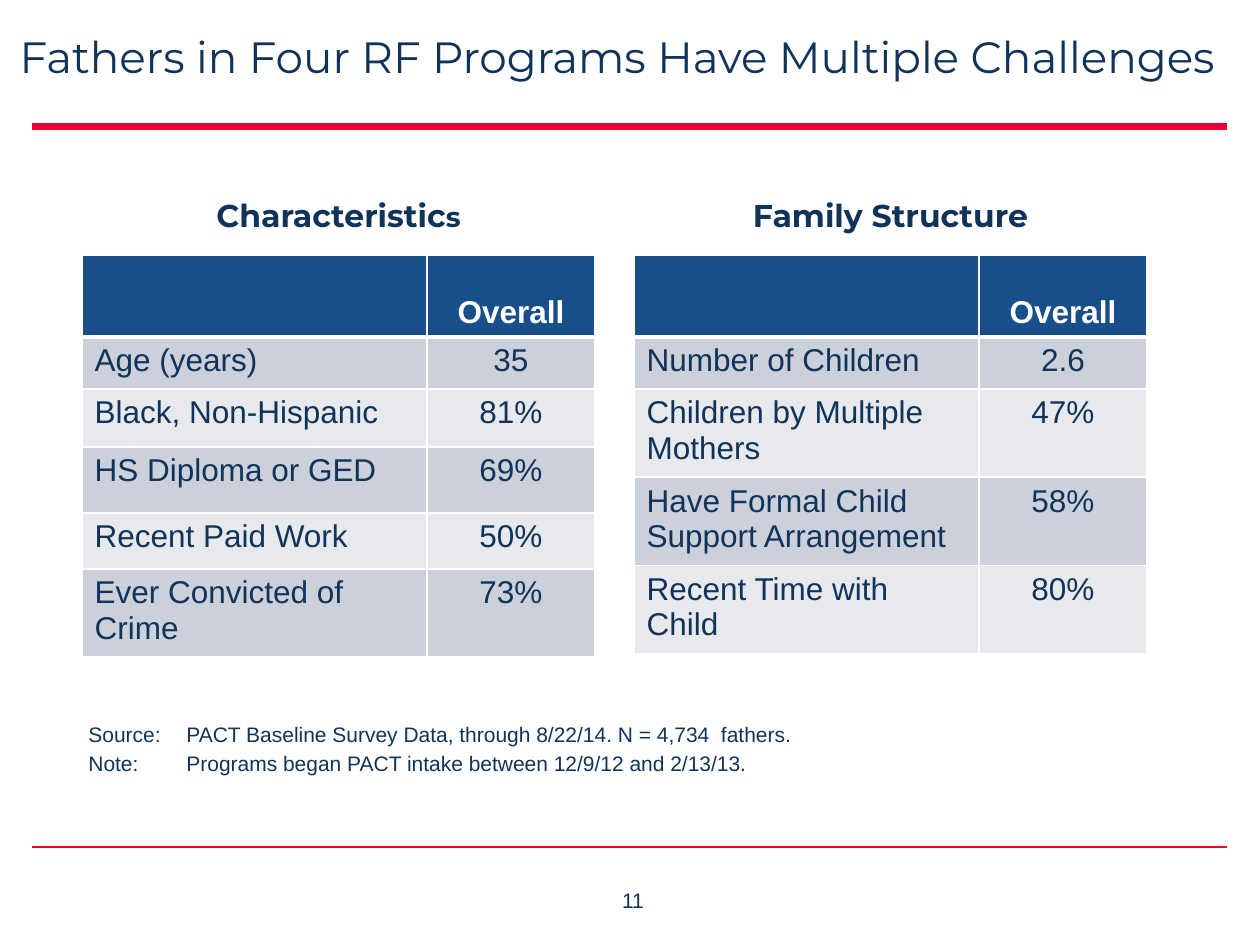
from lxml import etree
from pptx import Presentation, util as u
from pptx.dml.color import RGBColor
from pptx.enum import shapes, text
from pptx.oxml.ns import qn

NAVY = RGBColor(0x10, 0x33, 0x5A)
BLUE = RGBColor(0x18, 0x4E, 0x8A)
RED = RGBColor(0xE7, 0x00, 0x33)
WHITE = RGBColor(0xFF, 0xFF, 0xFF)
BANDS = [RGBColor(0xCC, 0xD0, 0xDA), RGBColor(0xE8, 0xE9, 0xED)]
CENTER = text.PP_ALIGN.CENTER


def px(n):
    return u.Emu(round(n * 914400 / 126))


def style(p, size, font="Arial", color=NAVY, bold=False, align=None):
    p.alignment = align
    p.font.size = u.Pt(size)
    p.font.name = font
    p.font.bold = bold
    p.font.color.rgb = color


prs = Presentation()
prs.slide_width, prs.slide_height = px(1260), px(945)
s = prs.slides.add_slide(prs.slide_layouts[5])

for y, weight in [(127, 4), (847, 1)]:
    rule = s.shapes.add_connector(shapes.MSO_CONNECTOR.STRAIGHT, px(32), px(y), px(1227), px(y))
    rule.line.color.rgb = RED
    rule.line.width = u.Pt(weight)
    etree.SubElement(rule._element.spPr, qn("a:effectLst"))

title = s.shapes.title
title.left, title.top, title.width, title.height = px(0), px(30), px(1234), px(120)
tf = title.text_frame
tf.margin_left = tf.margin_top = tf.margin_right = tf.margin_bottom = 0
tf.auto_size = text.MSO_AUTO_SIZE.NONE
tf.vertical_anchor = text.MSO_ANCHOR.TOP
tf.text = "Fathers in Four RF Programs Have Multiple Challenges"
style(tf.paragraphs[0], 25, "Montserrat", align=CENTER)

panels = [
    (82, [("Characteristic", 18), ("s", 16)], [
        ("Age (years)", "35", 52),
        ("Black, Non-Hispanic", "81%", 58),
        ("HS Diploma or GED", "69%", 66),
        ("Recent Paid Work", "50%", 56),
        ("Ever Convicted of Crime", "73%", 83),
    ]),
    (634, [("Family Structure", 18)], [
        ("Number of Children", "2.6", 52),
        ("Children by Multiple Mothers", "47%", 83),
        ("Have Formal Child Support Arrangement", "58%", 83),
        ("Recent Time with Child", "80%", 83),
    ]),
]
for left, heading, rows in panels:
    tf = s.shapes.add_textbox(px(left), px(190), px(513), px(65)).text_frame
    tf.word_wrap = True
    p = tf.paragraphs[0]
    style(p, 18, "Montserrat", bold=True, align=CENTER)
    for part, size in heading:
        r = p.add_run()
        r.text = part
        r.font.size = u.Pt(size)

    grid = [("", "Overall", 82)] + rows
    total = sum(height for _, _, height in grid)
    table = s.shapes.add_table(len(grid), 2, px(left), px(255), px(513), px(total)).table
    table.columns[0].width, table.columns[1].width = px(345), px(168)
    for i, (label, value, height) in enumerate(grid):
        table.rows[i].height = px(height)
        for j, words in enumerate([label, value]):
            cell = table.cell(i, j)
            for side in "LRTB":
                thick = (i, side) in [(0, "B"), (1, "T")]
                ln = etree.SubElement(cell._tc.get_or_add_tcPr(), qn("a:ln" + side),
                                      w=str(u.Pt(3 if thick else 1)))
                fill = etree.SubElement(ln, qn("a:solidFill"))
                etree.SubElement(fill, qn("a:srgbClr"), val=str(WHITE))
            cell.fill.solid()
            cell.fill.fore_color.rgb = BANDS[(i - 1) % 2] if i else BLUE
            cell.vertical_anchor = text.MSO_ANCHOR.TOP if i else text.MSO_ANCHOR.BOTTOM
            cell.text = words
            style(cell.text_frame.paragraphs[0], 18, color=NAVY if i else WHITE,
                  bold=i == 0, align=CENTER if j else None)

notes = [
    "Source:\tPACT Baseline Survey Data, through 8/22/14. N = 4,734  fathers.",
    "Note:\tPrograms began PACT intake between 12/9/12 and 2/13/13.",
]
tf = s.shapes.add_textbox(px(76), px(715), px(1116), px(80)).text_frame
tf.word_wrap = True
for i, note in enumerate(notes):
    p = tf.add_paragraph() if i else tf.paragraphs[0]
    p.text = note
    pPr = p._p.get_or_add_pPr()
    pPr.set("marL", str(px(98)))
    pPr.set("indent", str(-px(98)))
    if i:
        p.space_before = u.Pt(2.4)
    style(p, 12)

tf = s.shapes.add_textbox(px(570), px(881), px(126), px(48)).text_frame
tf.word_wrap = True
tf.text = "11"
style(tf.paragraphs[0], 12, align=CENTER)

prs.save("out.pptx")
